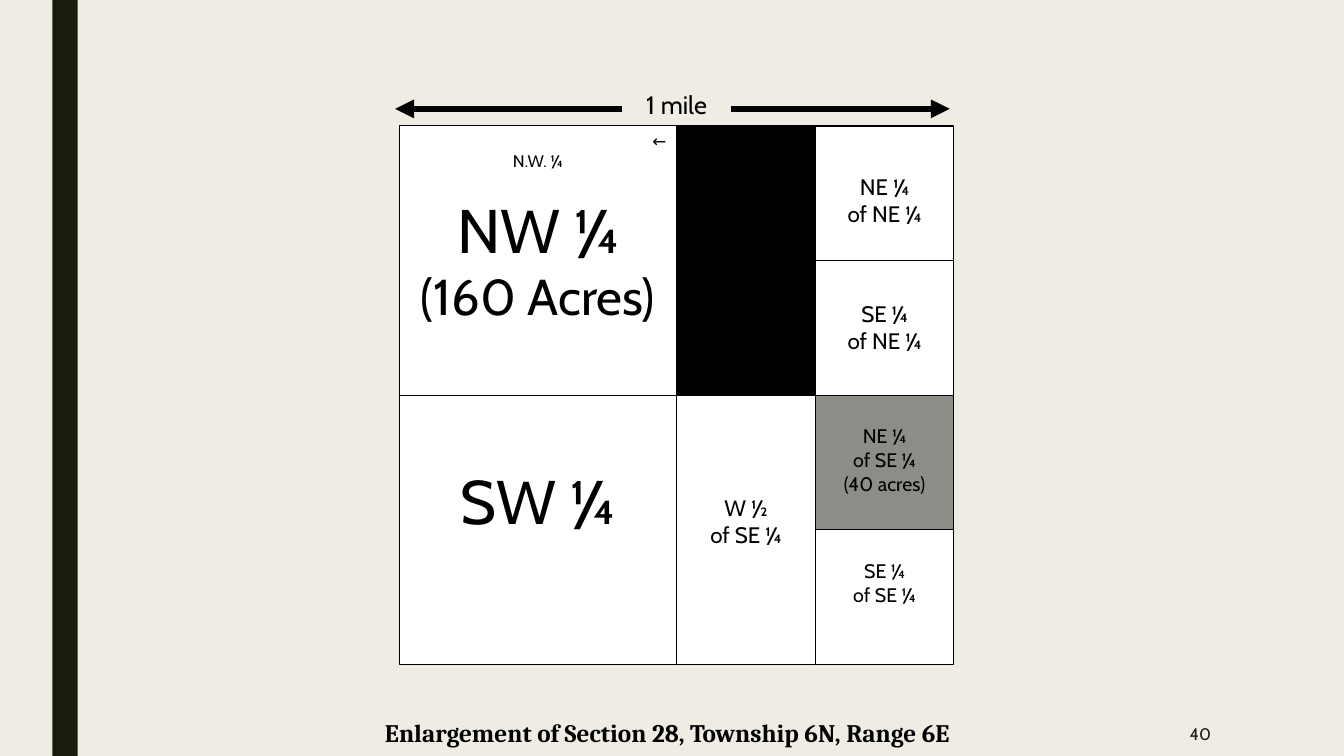
from lxml import etree
from pptx import Presentation
from pptx.dml.color import RGBColor
from pptx.enum.shapes import MSO_CONNECTOR, MSO_SHAPE
from pptx.enum.text import MSO_ANCHOR, PP_ALIGN
from pptx.oxml.ns import qn
from pptx.util import Inches, Pt

CENTER, RIGHT = PP_ALIGN.CENTER, PP_ALIGN.RIGHT
TOP, MIDDLE = MSO_ANCHOR.TOP, MSO_ANCHOR.MIDDLE
RECTANGLE, STRAIGHT = MSO_SHAPE.RECTANGLE, MSO_CONNECTOR.STRAIGHT

COLORS = {
    "background": "EFEDE3",
    "bar": "191B0E",
    "black": "000000",
    "white": "FFFFFF",
    "gray": "8C8D86",
}

# Parcels: column, row, columns wide, rows high, fill, space above text, lines
# Each line: text, size, alignment, points of space before
PARCELS = [
    (0, 0, 2, 2, "white", 0.05, [
        ("←", 12, RIGHT, 0),
        ("N.W. ¼", 12, CENTER, 0),
        ("NW ¼", 44, CENTER, 14.5),
        ("(160 Acres)", 36, CENTER, 0),
    ]),
    (2, 0, 1, 2, "black", 0, []),
    (3, 0, 1, 1, "white", 0.47, [("NE ¼", 16, CENTER, 0), ("of NE ¼", 16, CENTER, 0)]),
    (3, 1, 1, 1, "white", 0.39, [("SE ¼", 16, CENTER, 0), ("of NE ¼", 16, CENTER, 0)]),
    (0, 2, 2, 2, "white", 0.67, [("SW ¼", 44, CENTER, 0)]),
    (2, 2, 1, 2, "white", 0.98, [("W ½", 16, CENTER, 0), ("of SE ¼", 16, CENTER, 0)]),
    (3, 2, 1, 1, "gray", 0.29, [
        ("NE ¼", 14, CENTER, 0),
        ("of SE ¼", 14, CENTER, 0),
        ("(40 acres)", 14, CENTER, 0),
    ]),
    (3, 3, 1, 1, "white", 0.29, [("SE ¼", 14, CENTER, 0), ("of SE ¼", 14, CENTER, 0)]),
]

# Labels: left, top, width, height, text, size, alignment, anchor, font, bold, color
LABELS = [
    (6.25, 0.84, 0.92, 0.4, "1 mile", 18, CENTER, TOP, "Cabin", False, "black"),
    (3.37, 7.07, 6.5, 0.4, "Enlargement of Section 28, Township 6N, Range 6E",
     18, CENTER, MIDDLE, "Cambria", True, "black"),
    (10.36, 7.06, 1.75, 0.44, "40", 12, RIGHT, MIDDLE, "Cabin", False, "bar"),
]

# Arrows: start and end across
ARROWS = [(6.17, 3.92), (7.25, 9.42)]
ARROW_TOP = 1.08

SECTION_LEFT, SECTION_TOP = 3.96, 1.25
COLUMN_WIDTH, ROW_HEIGHT = 1.37, 1.33
SECTION_WIDTH, SECTION_HEIGHT = 5.5, 5.34
COLUMN_WIDTH, ROW_HEIGHT = SECTION_WIDTH / 4, SECTION_HEIGHT / 4


def color(name):
    return RGBColor.from_string(COLORS[name])


def add_rectangle(slide, left, top, width, height, fill):
    shape = slide.shapes.add_shape(
        RECTANGLE, Inches(left), Inches(top), Inches(width), Inches(height))
    shape.shadow.inherit = False
    shape.fill.solid()
    shape.fill.fore_color.rgb = color(fill)
    shape.line.fill.background()
    return shape


def write_lines(frame, lines, font="Cabin", bold=False, ink="black"):
    for index, (text, size, alignment, space) in enumerate(lines):
        paragraph = frame.add_paragraph() if index else frame.paragraphs[0]
        paragraph.text = text
        paragraph.alignment = alignment
        paragraph.space_before = Pt(space)
        paragraph.font.name = font
        paragraph.font.size = Pt(size)
        paragraph.font.bold = bold
        paragraph.font.color.rgb = color(ink)


def add_parcel(slide, column, row, columns, rows, fill, space_above, lines):
    shape = add_rectangle(
        slide,
        SECTION_LEFT + column * COLUMN_WIDTH, SECTION_TOP + row * ROW_HEIGHT,
        columns * COLUMN_WIDTH, rows * ROW_HEIGHT, fill)
    shape.line.color.rgb = color("black")
    shape.line.width = Pt(0.75)
    frame = shape.text_frame
    frame.word_wrap = True
    frame.vertical_anchor = TOP
    frame.margin_top = Inches(space_above)
    write_lines(frame, lines)


def add_label(slide, left, top, width, height, text, size, alignment, anchor,
              font, bold, ink):
    box = slide.shapes.add_textbox(
        Inches(left), Inches(top), Inches(width), Inches(height))
    box.text_frame.word_wrap = True
    box.text_frame.vertical_anchor = anchor
    write_lines(box.text_frame, [(text, size, alignment, 0)], font, bold, ink)


def add_arrow(slide, start, end):
    arrow = slide.shapes.add_connector(
        STRAIGHT, Inches(start), Inches(ARROW_TOP), Inches(end), Inches(ARROW_TOP))
    arrow.line.color.rgb = color("black")
    arrow.line.width = Pt(4.5)
    etree.SubElement(arrow.line._get_or_add_ln(), qn("a:tailEnd"), type="triangle")
    etree.SubElement(arrow._element.spPr, qn("a:effectLst"))


def main():
    presentation = Presentation()
    presentation.slide_width = Inches(13.33)
    presentation.slide_height = Inches(7.5)
    slide = presentation.slides.add_slide(presentation.slide_layouts[6])

    # Background and side bar
    slide.background.fill.solid()
    slide.background.fill.fore_color.rgb = color("background")
    add_rectangle(slide, 0.52, 0, 0.25, 7.5, "bar")

    # Section divided into parcels
    for parcel in PARCELS:
        add_parcel(slide, *parcel)

    # Mile marker, caption and page number
    for start, end in ARROWS:
        add_arrow(slide, start, end)
    for label in LABELS:
        add_label(slide, *label)

    presentation.save("out.pptx")


if __name__ == "__main__":
    main()
